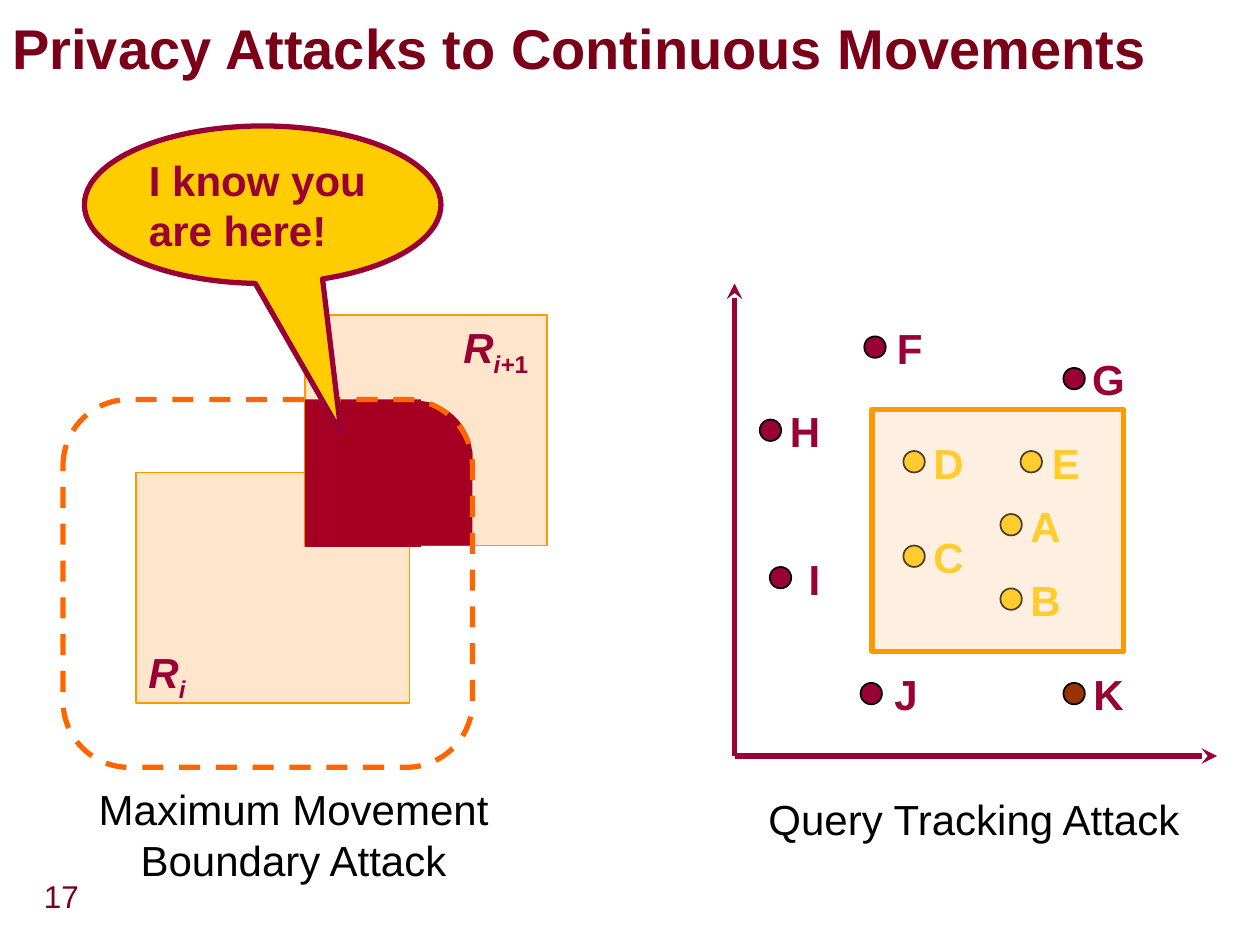
from collections import namedtuple
from dataclasses import dataclass

from lxml import etree
from pptx import Presentation
from pptx.dml import color
from pptx.enum import dml, shapes, text
from pptx.oxml import ns
from pptx.util import Inches, Pt

Box = namedtuple("Box", "left top width height")
Point = namedtuple("Point", "name left top label_shift label_width fill ink")
SHAPE = shapes.MSO_SHAPE


@dataclass(frozen=True)
class Theme:
    font: str = "Arial"
    title_ink: str = "7A0019"
    ink: str = "990033"
    black: str = "000000"
    gold: str = "FFCC00"
    brown: str = "993300"
    peach: str = "FFCC99"
    orange: str = "FF9900"
    boundary: str = "FF6600"
    overlap: str = "A50021"
    title_size: int = 32
    body_size: int = 24
    number_size: int = 18
    thin: int = 1
    thick: int = 3


THEME = Theme()


def rgb(value):
    return color.RGBColor.from_string(value)


def inside(box, left, top, width, height):
    return Box(box.left + left, box.top + top, width, height)


def lengths(box):
    return [Inches(value) for value in box]


def add_block(parent, kind, box, fill=None, line=None, weight=THEME.thin, opacity=None):
    block = parent.add_shape(kind, *lengths(box))
    block.shadow.inherit = False
    if fill:
        block.fill.solid()
        block.fill.fore_color.rgb = rgb(fill)
        if opacity:
            tint = block.fill._xPr.find(".//" + ns.qn("a:srgbClr"))
            etree.SubElement(tint, ns.qn("a:alpha"), val=str(opacity * 1000))
    else:
        block.fill.background()
    if line:
        block.line.color.rgb = rgb(line)
        block.line.width = Pt(weight)
    else:
        block.line.fill.background()
    return block


def style(span, size, ink, bold=False, italic=False):
    span.font.name = THEME.font
    span.font.size = Pt(size)
    span.font.color.rgb = rgb(ink)
    span.font.bold = bold
    span.font.italic = italic


def add_text(parent, box, words, ink, size=THEME.body_size, bold=False, wrap=True):
    label = parent.add_textbox(*lengths(box))
    label.text_frame.word_wrap = wrap
    para = label.text_frame.paragraphs[0]
    para.text = words
    style(para.runs[0], size, ink, bold)
    return label


def add_region_name(parent, box, subscripts):
    label = add_text(parent, box, "R", THEME.ink, bold=True, wrap=False)
    para = label.text_frame.paragraphs[0]
    para.runs[0].font.italic = True
    for words, italic in subscripts:
        span = para.add_run()
        span.text = words
        style(span, THEME.body_size, THEME.ink, True, italic)
        span.font._element.set("baseline", "-25000")


def add_axis(parent, tip, origin):
    axis = parent.add_connector(
        shapes.MSO_CONNECTOR.STRAIGHT, *lengths(tip), *lengths(origin))
    axis.line.color.rgb = rgb(THEME.ink)
    axis.line.width = Pt(THEME.thick)
    etree.SubElement(axis.line._get_or_add_ln(), ns.qn("a:headEnd"), type="stealth")
    etree.SubElement(axis._element.spPr, ns.qn("a:effectLst"))


def add_point(parent, box, point):
    group = parent.add_group_shape().shapes
    dot = inside(box, point.left, point.top, 0.17, 0.17)
    add_block(group, SHAPE.OVAL, dot, point.fill, THEME.black)
    label = inside(dot, point.label_shift, -0.16, point.label_width, 0.5)
    add_text(group, label, point.name, point.ink, bold=True)


def add_title(page, box):
    title = add_text(page.shapes, box, "Privacy Attacks to Continuous Movements",
                     THEME.title_ink, THEME.title_size, bold=True)
    title.text_frame.vertical_anchor = text.MSO_ANCHOR.MIDDLE


def add_overlap(parent, box):
    group = parent.add_group_shape().shapes
    add_block(group, SHAPE.RECTANGLE, inside(box, 0, 0, 0.92, 1.17), THEME.overlap)
    add_block(group, SHAPE.RECTANGLE, inside(box, 0.91, 0.41, 0.42, 0.75), THEME.overlap)
    corner = add_block(group, SHAPE.ROUNDED_RECTANGLE,
                       inside(box, 0.41, 0.01, 0.92, 0.91), THEME.overlap)
    corner.adjustments[0] = 0.5


def add_callout(parent, box):
    callout = add_block(parent, SHAPE.OVAL_CALLOUT, box, THEME.gold, THEME.ink, THEME.thick)
    callout.adjustments[0] = 0.22
    callout.adjustments[1] = 1.45
    frame = callout.text_frame
    frame.text = "I know you are here!"
    frame.word_wrap = True
    frame.vertical_anchor = text.MSO_ANCHOR.MIDDLE
    frame.paragraphs[0].alignment = text.PP_ALIGN.LEFT
    style(frame.paragraphs[0].runs[0], THEME.body_size, THEME.ink, bold=True)


def add_boundary_attack(page, box):
    parent = page.shapes
    for region in (inside(box, 0.58, 2.75, 2.17, 1.83), inside(box, 1.92, 1.5, 1.92, 1.83)):
        add_block(parent, SHAPE.RECTANGLE, region, THEME.peach, THEME.orange, opacity=50)
    add_overlap(parent, inside(box, 1.92, 2.17, 1.33, 1.17))
    add_region_name(parent, inside(box, 0.58, 4.08, 0.51, 0.5), [("i", True)])
    add_region_name(parent, inside(box, 3.08, 1.5, 0.76, 0.5), [("i+", True), ("1", False)])
    boundary = add_block(parent, SHAPE.ROUNDED_RECTANGLE, inside(box, 0, 2.17, 3.25, 2.92),
                         line=THEME.boundary, weight=THEME.thick)
    boundary.adjustments[0] = 0.18
    boundary.line.dash_style = dml.MSO_LINE.DASH
    add_callout(parent, inside(box, 0.17, 0, 2.83, 1.25))
    caption = add_text(parent, inside(box, 0.08, 5.17, 3.5, 0.91),
                       "Maximum Movement Boundary Attack", THEME.black)
    caption.text_frame.paragraphs[0].alignment = text.PP_ALIGN.CENTER


def add_query_attack(page, box):
    parent = page.shapes
    origin = (box.left, box.top + box.height)
    add_axis(parent, (box.left, box.top), origin)
    add_axis(parent, (box.left + box.width, origin[1]), origin)
    inner = (THEME.gold, THEME.gold)
    outer = (THEME.ink, THEME.ink)
    for point in (
        Point("C", 1.34, 2.08, 0.14, 0.44, *inner),
        Point("D", 1.34, 1.33, 0.14, 0.44, *inner),
        Point("E", 2.27, 1.33, 0.15, 0.42, *inner),
        Point("B", 2.11, 2.42, 0.14, 0.44, *inner),
        Point("I", 0.28, 2.25, 0.21, 0.29, *outer),
        Point("J", 1, 3.17, 0.17, 0.39, *outer),
        Point("A", 2.11, 1.83, 0.14, 0.44, *inner),
        Point("F", 1.03, 0.42, 0.16, 0.4, *outer),
        Point("H", 0.2, 1.08, 0.14, 0.44, *outer),
        Point("K", 2.61, 3.17, 0.14, 0.44, THEME.brown, THEME.ink),
        Point("G", 2.61, 0.67, 0.13, 0.46, *outer),
    ):
        add_point(parent, box, point)
    add_block(parent, SHAPE.RECTANGLE, inside(box, 1.09, 1, 2, 1.92),
              THEME.peach, THEME.orange, THEME.thick, opacity=30)
    add_text(parent, inside(box, 0.17, 4, 3.49, 0.5), "Query Tracking Attack",
             THEME.black, wrap=False)


def main():
    deck = Presentation()
    deck.slide_width, deck.slide_height = Inches(10), Inches(7.5)
    page = deck.slides.add_slide(deck.slide_layouts[6])
    add_text(page.shapes, Box(0.25, 6.91, 0.51, 0.4), "17",
             THEME.title_ink, THEME.number_size, wrap=False)
    add_boundary_attack(page, Box(0.5, 1, 3.84, 6.08))
    add_query_attack(page, Box(5.83, 2.25, 3.83, 3.75))
    add_title(page, Box(0, 0, 10, 0.75))
    deck.save("out.pptx")


if __name__ == "__main__":
    main()
